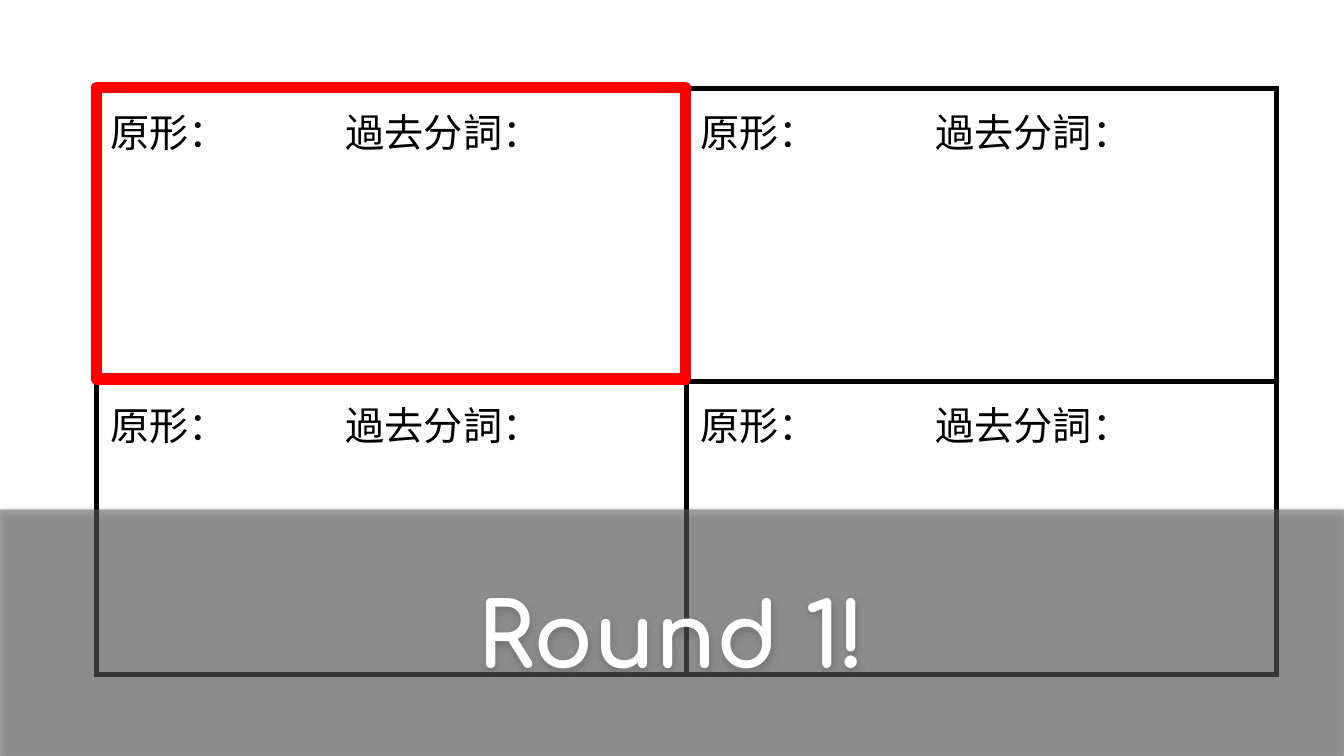
from lxml import etree
from pptx import Presentation
from pptx.dml.color import RGBColor
from pptx.enum.shapes import MSO_SHAPE
from pptx.enum.text import MSO_ANCHOR, PP_ALIGN
from pptx.oxml.ns import qn
from pptx.util import Inches, Pt

RECTANGLE = MSO_SHAPE.RECTANGLE
MIDDLE = MSO_ANCHOR.MIDDLE
CENTER = PP_ALIGN.CENTER

WIDTH = 10
HEIGHT = WIDTH * 9 / 16
CELL_LABELS = "原形：\t過去分詞："
BANNER_TEXT = "Round 1!"
ROWS = COLUMNS = 2
GRID_LEFT, GRID_TOP = 0.72, 0.66
CELL_WIDTH, CELL_HEIGHT = 4.39, 2.18
TAB_STOP = 1.75
BANNER_TOP, BANNER_HEIGHT = 3.79, 1.84
BLACK, WHITE, RED, GREY = "000000", "FFFFFF", "FF0000", "666666"


def paint(target, color):
    target.solid()
    target.fore_color.rgb = RGBColor.from_string(color)


def add_element(parent, tag, **attributes):
    return etree.SubElement(parent, qn(tag), {key: str(value) for key, value in attributes.items()})


def format_span(span, font, size, color, bold=False):
    span.font.name = font
    span.font.size = Pt(size)
    span.font.bold = bold
    paint(span.font.fill, color)


def set_margins(target):
    target.margin_left = target.margin_right = Inches(0.1)
    target.margin_top = target.margin_bottom = Inches(0.1)


def add_borders(cell, color, width):
    properties = cell._tc.get_or_add_tcPr()
    for side in ("a:lnL", "a:lnR", "a:lnT", "a:lnB"):
        line = add_element(properties, side, w=Pt(width))
        fill = add_element(line, "a:solidFill")
        add_element(fill, "a:srgbClr", val=color)


def fill_cell(cell):
    add_borders(cell, BLACK, 3)
    paint(cell.fill, WHITE)
    set_margins(cell)
    para = cell.text_frame.paragraphs[0]
    para.text = CELL_LABELS
    tabs = add_element(para._p.get_or_add_pPr(), "a:tabLst")
    add_element(tabs, "a:tab", pos=Inches(TAB_STOP), algn="l")
    format_span(para.runs[0], "Arial", 21, BLACK)


def add_grid(page):
    table = page.shapes.add_table(
        ROWS, COLUMNS, Inches(GRID_LEFT), Inches(GRID_TOP),
        Inches(COLUMNS * CELL_WIDTH), Inches(ROWS * CELL_HEIGHT),
    ).table
    for column in table.columns:
        column.width = Inches(CELL_WIDTH)
    for row in table.rows:
        row.height = Inches(CELL_HEIGHT)
    for cell in table.iter_cells():
        fill_cell(cell)


def add_box(page, left, top, width, height):
    box = page.shapes.add_shape(RECTANGLE, Inches(left), Inches(top), Inches(width), Inches(height))
    box.shadow.inherit = False
    return box


def add_banner(page):
    banner = add_box(page, 0, BANNER_TOP, WIDTH, BANNER_HEIGHT)
    paint(banner.fill, GREY)
    banner.line.fill.background()
    properties = banner._element.spPr
    add_element(properties.find(qn("a:solidFill"))[0], "a:alpha", val=54000)
    shadow = add_element(
        properties.find(qn("a:effectLst")), "a:outerShdw",
        blurRad=Pt(4.5), dist=Pt(1.5), dir=90 * 60000, algn="bl", rotWithShape=0,
    )
    add_element(add_element(shadow, "a:srgbClr", val=BLACK), "a:alpha", val=50000)

    frame = banner.text_frame
    frame.text = BANNER_TEXT
    frame.word_wrap = True
    frame.vertical_anchor = MIDDLE
    set_margins(frame)
    para = frame.paragraphs[0]
    para.alignment = CENTER
    format_span(para.runs[0], "Comfortaa", 48, WHITE, bold=True)


def add_highlight(page):
    highlight = add_box(page, GRID_LEFT, 0.65, 4.38, 2.17)
    highlight.fill.background()
    paint(highlight.line.fill, RED)
    highlight.line.width = Pt(6)


def main():
    deck = Presentation()
    deck.slide_width, deck.slide_height = Inches(WIDTH), Inches(HEIGHT)
    page = deck.slides.add_slide(deck.slide_layouts[6])
    add_grid(page)
    add_banner(page)
    add_highlight(page)
    deck.save("out.pptx")


if __name__ == "__main__":
    main()
